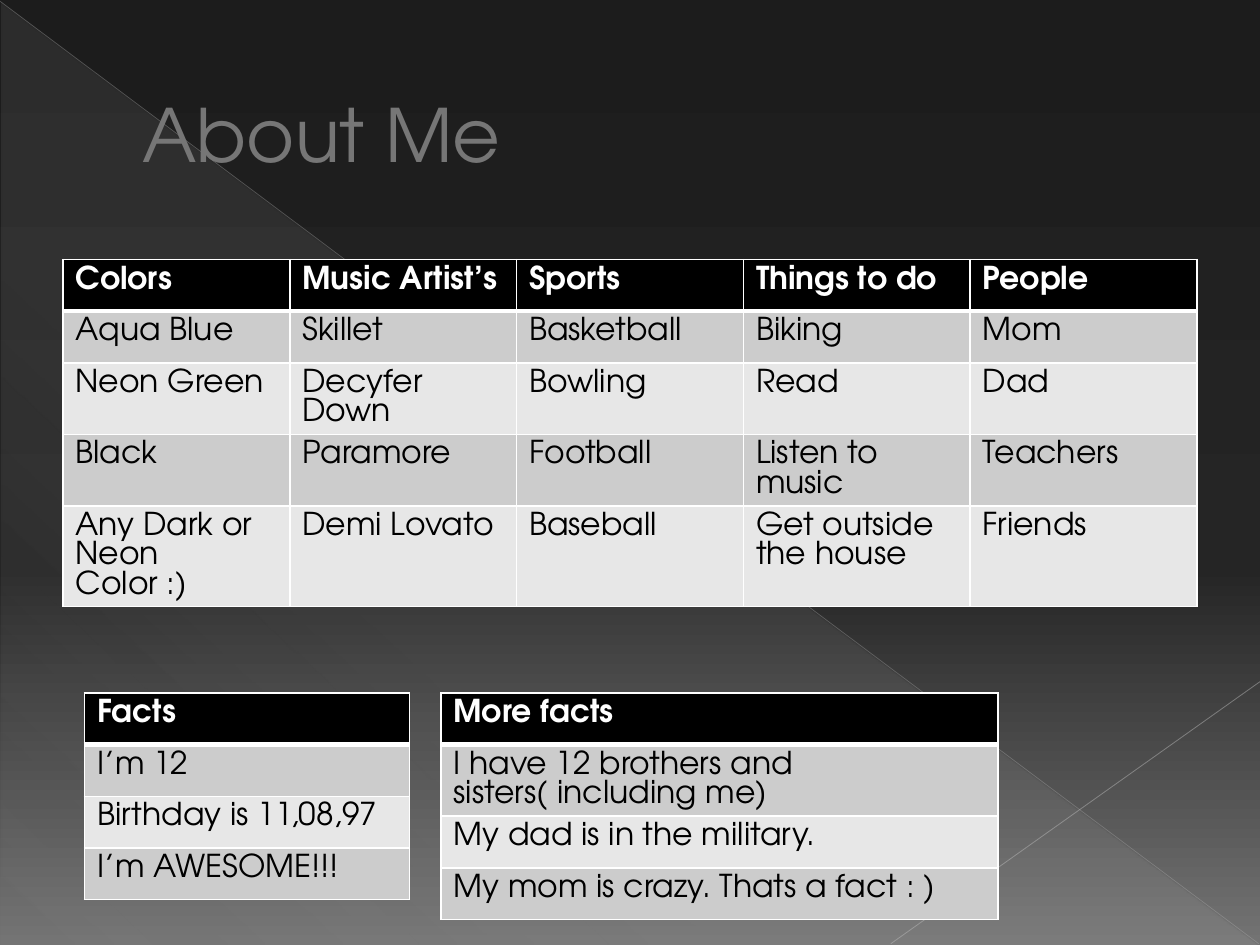
from lxml import etree
from pptx import Presentation
from pptx import util as u
from pptx.dml.color import RGBColor
from pptx.enum import shapes, text
from pptx.oxml import ns

WIDTH, HEIGHT = u.Inches(10), u.Inches(7.5)
FONT = "TeX Gyre Adventor"
WHITE = RGBColor(0xFF, 0xFF, 0xFF)
BLACK = RGBColor(0, 0, 0)
TITLE_GREY = RGBColor(0x76, 0x76, 0x76)
BANDS = (RGBColor(0xCC, 0xCC, 0xCC), RGBColor(0xE7, 0xE7, 0xE7))
NIGHT = RGBColor(0x1C, 0x1C, 0x1C)
CHARCOAL = RGBColor(0x25, 0x25, 0x25)
ASH = RGBColor(0x73, 0x73, 0x73)
MIST = RGBColor(0xD2, 0xD2, 0xD2)
LONG_LINE = RGBColor(0xB5, 0xB5, 0xB5)
SHORT_LINE = RGBColor(0xBE, 0xBE, 0xBE)

FAVOURITES = [
    ["Colors", "Music Artist’s", "Sports", "Things to do", "People"],
    ["Aqua Blue", "Skillet", "Basketball", "Biking", "Mom"],
    ["Neon Green", "Decyfer Down", "Bowling", "Read", "Dad"],
    ["Black", "Paramore", "Football", "Listen to music", "Teachers"],
    ["Any Dark or Neon Color :)", "Demi Lovato", "Baseball", "Get outside the house", "Friends"],
]
FACTS = [["Facts"], ["I’m 12"], ["Birthday is 11,08,97"], ["I’m AWESOME!!!"]]
MORE_FACTS = [
    ["More facts"],
    ["I have 12 brothers and sisters( including me)"],
    ["My dad is in the military."],
    ["My mom is crazy. Thats a fact : )"],
]


def add_child(parent, tag, **attributes):
    """Append a drawing element with the given attributes."""
    child = etree.SubElement(parent, ns.qn(tag))
    for name, value in attributes.items():
        child.set(name, str(value))
    return child


def add_color(parent, color, opacity=100):
    """Append a colour, with its opacity in percent."""
    node = add_child(parent, "a:srgbClr", val=color)
    if opacity < 100:
        add_child(node, "a:alpha", val=opacity * 1000)


def set_gradient(fill, element, stops, angle):
    """Fill the element with a linear gradient of (position, colour, opacity) stops."""
    fill.gradient()
    gradient = element.find(".//" + ns.qn("a:gradFill"))
    for child in list(gradient):
        gradient.remove(child)
    stop_list = add_child(gradient, "a:gsLst")
    for position, color, opacity in stops:
        add_color(add_child(stop_list, "a:gs", pos=position * 1000), color, opacity)
    add_child(gradient, "a:lin", ang=angle * 60000, scaled=0)


def add_line(page, start, end, color, points, opacity):
    """Draw a translucent straight line between two points given in inches."""
    ends = [u.Inches(value) for value in (*start, *end)]
    line = page.shapes.add_connector(shapes.MSO_CONNECTOR.STRAIGHT, *ends)
    line.line.width = u.Pt(points)
    line.line.color.rgb = color
    add_child(line.element.find(".//" + ns.qn("a:srgbClr")), "a:alpha", val=opacity * 1000)
    add_child(line.element.spPr, "a:effectLst")


def draw_backdrop(page):
    """Paint the dark gradient, the pale triangle and the two diagonals."""
    set_gradient(page.background.fill, page.element,
                 [(0, NIGHT, 100), (60, CHARCOAL, 100), (100, ASH, 100)], 90)
    box = [u.Inches(value) for value in (0.01, 0.02, 9.98, 7.48)]
    triangle = page.shapes.add_shape(shapes.MSO_SHAPE.RIGHT_TRIANGLE, *box)
    triangle.shadow.inherit = False
    triangle.line.fill.background()
    set_gradient(triangle.fill, triangle.element.spPr,
                 [(0, MIST, 10), (70, MIST, 8), (100, MIST, 1)], 133)
    add_line(page, (0, 0.01), (9.99, 7.49), LONG_LINE, 0.39, 35)
    add_line(page, (10, 5.41), (7.07, 7.49), SHORT_LINE, 0.47, 45)


def write_title(page, box, wording):
    """Place the outlined title in front of the backdrop."""
    title = page.shapes.title
    title.element.getparent().append(title.element)
    title.left, title.top, title.width, title.height = [u.Inches(value) for value in box]
    title.text_frame.vertical_anchor = text.MSO_ANCHOR.MIDDLE
    para = title.text_frame.paragraphs[0]
    para.alignment = text.PP_ALIGN.LEFT
    properties = para._p.get_or_add_pPr()
    properties.set("marL", str(u.Inches(0.53)))
    properties.set("indent", "0")
    span = para.add_run()
    span.text = wording
    span.font.size = u.Pt(42)
    span.font.name = FONT
    span.font.color.rgb = TITLE_GREY
    outline = add_child(span.font._element, "a:ln", w=u.Pt(0.5))
    add_color(add_child(outline, "a:solidFill"), BLACK)
    span.font._element.insert(0, outline)


def set_borders(cell, top, bottom):
    """Rule a cell in white, with the given top and bottom widths in points."""
    properties = cell._tc.get_or_add_tcPr()
    for place, (side, points) in enumerate(zip("LRTB", (1, 1, top, bottom))):
        border = add_child(properties, "a:ln" + side, w=u.Pt(points))
        add_color(add_child(border, "a:solidFill"), WHITE)
        properties.insert(place, border)


def write_cell(cell, wording, row):
    """Fill one cell as a header or as part of a grey band."""
    header = row == 0
    cell.fill.solid()
    cell.fill.fore_color.rgb = BLACK if header else BANDS[(row - 1) % 2]
    set_borders(cell, 3 if row == 1 else 1, 3 if header else 1)
    span = cell.text_frame.paragraphs[0].add_run()
    span.text = wording
    span.font.size = u.Pt(18)
    span.font.name = FONT
    span.font.bold = header
    span.font.color.rgb = WHITE if header else BLACK


def draw_table(page, left, top, width, rows):
    """Draw a banded table with equal columns and equal minimum row heights."""
    row_height = u.Inches(0.41)
    frame = page.shapes.add_table(len(rows), len(rows[0]), u.Inches(left), u.Inches(top),
                                  u.Inches(width), row_height * len(rows))
    table = frame.table
    table.horz_banding = False
    for index, row in enumerate(rows):
        table.rows[index].height = row_height
        for column, wording in enumerate(row):
            write_cell(table.cell(index, column), wording, index)


def main():
    """Build the deck and save it."""
    deck = Presentation()
    deck.slide_width, deck.slide_height = WIDTH, HEIGHT
    page = deck.slides.add_slide(deck.slide_layouts.get_by_name("Title Only"))
    draw_backdrop(page)
    write_title(page, (0.5, 0.29, 9, 1.53), "About Me")
    draw_table(page, 0.5, 2.06, 9, FAVOURITES)
    draw_table(page, 0.67, 5.5, 2.58, FACTS)
    draw_table(page, 3.5, 5.5, 4.42, MORE_FACTS)
    deck.save("out.pptx")


if __name__ == "__main__":
    main()
